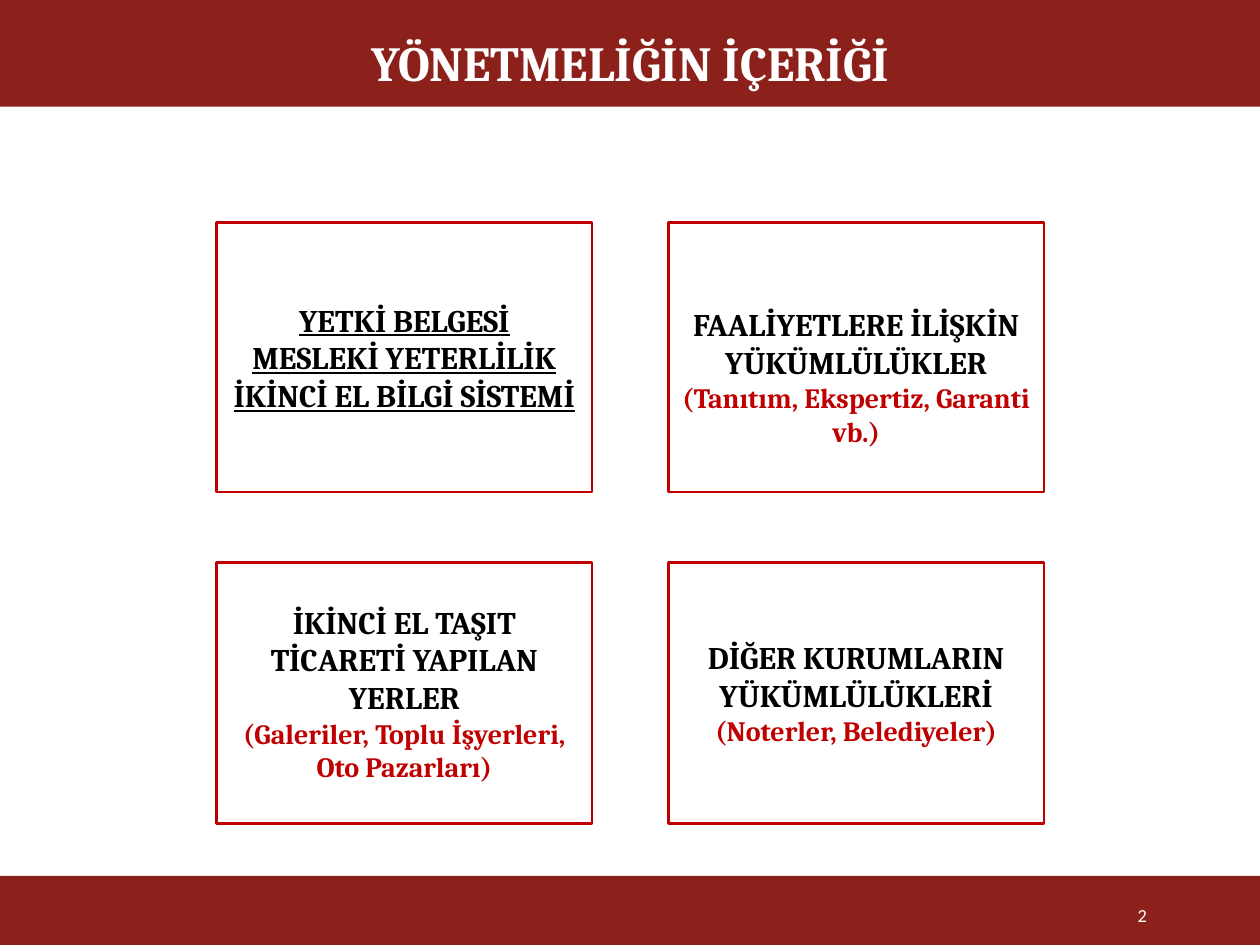
from lxml.etree import SubElement
from pptx import Presentation
from pptx.dml.color import RGBColor
from pptx.enum.shapes import MSO_SHAPE as Shape
from pptx.enum.text import MSO_ANCHOR as Anchor, MSO_AUTO_SIZE as AutoSize, PP_ALIGN as Align
from pptx.oxml.ns import qn
from pptx.util import Pt

TITLE = "YÖNETMELİĞİN İÇERİĞİ"
PAGE_NUMBER = "2"
# Rows of topics: headings, detail in brackets, underlined, extra space above the text
TOPIC_ROWS = [
    [
        (["YETKİ BELGESİ", "MESLEKİ YETERLİLİK", "İKİNCİ EL BİLGİ SİSTEMİ"], None, True, 0),
        (["FAALİYETLERE İLİŞKİN YÜKÜMLÜLÜKLER"], "(Tanıtım, Ekspertiz, Garanti vb.)", False, 22),
    ],
    [
        (["İKİNCİ EL TAŞIT TİCARETİ YAPILAN YERLER"],
         "(Galeriler, Toplu İşyerleri, Oto Pazarları)", False, 0),
        (["DİĞER KURUMLARIN YÜKÜMLÜLÜKLERİ"], "(Noterler, Belediyeler)", False, 0),
    ],
]


class Theme:
    band = RGBColor(0x8C, 0x21, 0x1B)
    accent = RGBColor(0xC0, 0x00, 0x00)
    white = RGBColor(0xFF, 0xFF, 0xFF)
    black = RGBColor(0x00, 0x00, 0x00)
    serif, sans = "Cambria", "Calibri"
    title_size, heading_size, detail_size, page_size = 28, 18, 16, 10.5


SLIDE_W, SLIDE_H = 720, 540
HEADER_H, FOOTER_H = 61, 39.5
TOPIC_W, COLUMN_LEFT, COLUMN_STEP = 214.5, 123.8, 258.2
ROWS = [(127.1, 154), (321.5, 149)]  # top, height
INSET_Y = 3.6


def add_run(paragraph, text, size, color, font=Theme.serif, bold=True, underline=None, shadow=False):
    run = paragraph.add_run()
    run.text = text
    run.font.size = Pt(size)
    run.font.bold = bold
    run.font.underline = underline
    run.font.color.rgb = color
    if shadow:
        add_text_shadow(run)
    run.font.name = font


def add_text_shadow(run):
    effects = SubElement(run.font._element, qn("a:effectLst"))
    outer = SubElement(effects, qn("a:outerShdw"), blurRad="38100", dist="38100", dir="2700000", algn="tl")
    color = SubElement(outer, qn("a:srgbClr"), val="000000")
    SubElement(color, qn("a:alpha"), val="43000")


def add_rectangle(slide, left, top, width, height, fill, line=None):
    rectangle = slide.shapes.add_shape(Shape.RECTANGLE, Pt(left), Pt(top), Pt(width), Pt(height))
    rectangle.shadow.inherit = False
    rectangle.fill.solid()
    rectangle.fill.fore_color.rgb = fill
    if line is None:
        rectangle.line.fill.background()
    else:
        rectangle.line.color.rgb = line
        rectangle.line.width = Pt(1.5)
    return rectangle


def add_topic(slide, left, top, height, headings, detail, underline, space_above):
    topic = add_rectangle(slide, left, top, TOPIC_W, height, Theme.white, Theme.accent)
    frame = topic.text_frame
    frame.word_wrap = True
    frame.vertical_anchor = Anchor.MIDDLE
    frame.margin_top = Pt(INSET_Y + space_above)
    lines = [(heading, Theme.heading_size, Theme.black) for heading in headings]
    if detail:
        lines.append((detail, Theme.detail_size, Theme.accent))
    for index, (text, size, color) in enumerate(lines):
        paragraph = frame.add_paragraph() if index else frame.paragraphs[0]
        paragraph.alignment = Align.CENTER
        add_run(paragraph, text, size, color, underline=underline or None)


def place_title(slide):
    title = slide.shapes.title
    title.left, title.top, title.width, title.height = Pt(123), Pt(15), Pt(474.5), Pt(34)
    frame = title.text_frame
    frame.auto_size = AutoSize.NONE
    frame.word_wrap = True
    frame.vertical_anchor = Anchor.TOP
    paragraph = frame.paragraphs[0]
    paragraph.alignment = Align.CENTER
    add_run(paragraph, TITLE, Theme.title_size, Theme.white, shadow=True)
    # Bring the title in front of the header band
    title.element.getparent().append(title.element)


def add_page_number(slide):
    box = slide.shapes.add_textbox(Pt(584.6), Pt(508.5), Pt(77.8), Pt(29))
    frame = box.text_frame
    frame.word_wrap = True
    frame.vertical_anchor = Anchor.MIDDLE
    paragraph = frame.paragraphs[0]
    paragraph.alignment = Align.RIGHT
    add_run(paragraph, PAGE_NUMBER, Theme.page_size, Theme.white, Theme.sans, bold=False)


def main():
    deck = Presentation()
    deck.slide_width, deck.slide_height = Pt(SLIDE_W), Pt(SLIDE_H)
    slide = deck.slides.add_slide(deck.slide_layouts[5])

    add_rectangle(slide, 0, SLIDE_H - FOOTER_H, SLIDE_W, FOOTER_H, Theme.band)
    add_rectangle(slide, 0, 0, SLIDE_W, HEADER_H, Theme.band)
    place_title(slide)
    for (top, height), topics in zip(ROWS, TOPIC_ROWS):
        for column, topic in enumerate(topics):
            add_topic(slide, COLUMN_LEFT + column * COLUMN_STEP, top, height, *topic)
    add_page_number(slide)
    deck.save("out.pptx")


if __name__ == "__main__":
    main()
